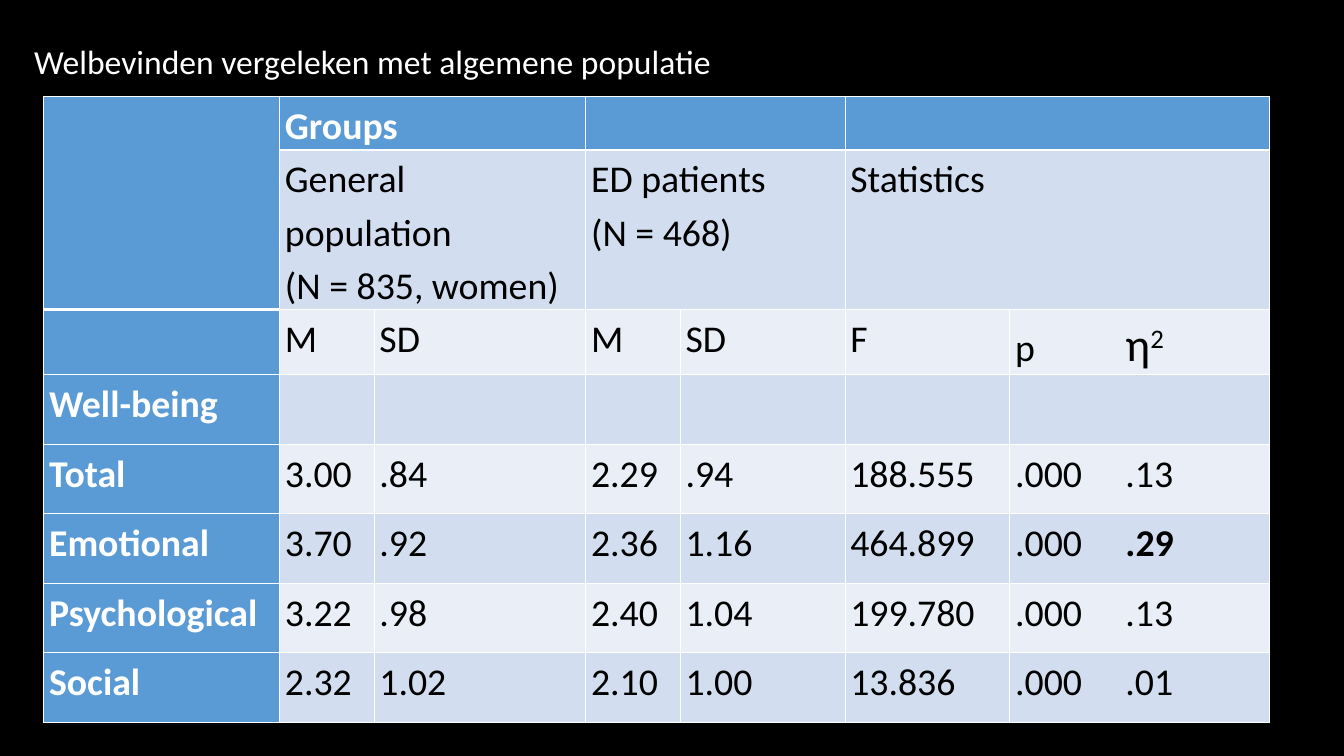
from lxml import etree
from pptx import Presentation
from pptx.dml.color import RGBColor
from pptx.enum.text import MSO_ANCHOR, MSO_AUTO_SIZE, PP_ALIGN
from pptx.oxml.ns import qn
from pptx.util import Inches, Pt

LEFT, TOP, NO_FIT = PP_ALIGN.LEFT, MSO_ANCHOR.TOP, MSO_AUTO_SIZE.NONE

BLACK = RGBColor(0x00, 0x00, 0x00)
WHITE = RGBColor(0xFF, 0xFF, 0xFF)
BLUE = RGBColor(0x5B, 0x9B, 0xD5)
BANDS = RGBColor(0xEA, 0xEF, 0xF7), RGBColor(0xD2, 0xDE, 0xEF)
FONT = "Calibri"

COLS = [3.12, 1.25, 2.8, 1.25, 2.18, 2.18, 3.43]
ROWS = [0.61, 1.86, 0.76] + [0.92] * 5
GROUP_COLS = [1, 3, 5]  # each group heading covers two columns
ETA_TAB = 1.46  # offset of the effect size within the last column

# Each cell is a string, or a list of (text, format) runs
CELLS = [
    ["", "Groups", "", "", "", "", ""],
    ["", "General population\n(N = 835, women)", "",
     "ED patients\n(N = 468)", "", "Statistics", ""],
    ["", "M", "SD", "M", "SD", "F",
     [("p\t", {}), ("η", {"size": 44}), ("2", {"size": 44, "baseline": 30})]],
    ["Well-being", "", "", "", "", "", ""],
    ["Total", "3.00", ".84", "2.29", ".94", "188.555", ".000\t.13"],
    ["Emotional", "3.70", ".92", "2.36", "1.16", "464.899",
     [(".000\t", {}), (".29", {"bold": True})]],
    ["Psychological", "3.22", ".98", "2.40", "1.04", "199.780", ".000\t.13"],
    ["Social", "2.32", "1.02", "2.10", "1.00", "13.836", ".000\t.01"],
]


def add_text(p, text, size=36, color=BLACK, bold=False, baseline=0):
    r = p.add_run()
    r.text = text
    r.font.name = FONT
    r.font.size = Pt(size)
    r.font.bold = bold
    r.font.color.rgb = color
    if baseline:
        r._r.get_or_add_rPr().set("baseline", str(baseline * 1000))


def add_tab(p, pos):
    tabs = etree.SubElement(p._p.get_or_add_pPr(), qn("a:tabLst"))
    etree.SubElement(tabs, qn("a:tab"), pos=str(Inches(pos)), algn="l")


def set_borders(cell, top=1, bottom=1):
    tcPr = cell._tc.get_or_add_tcPr()
    for side, width in zip("LRTB", (1, 1, top, bottom)):
        ln = etree.SubElement(tcPr, qn(f"a:ln{side}"), w=str(Pt(width)))
        fill = etree.SubElement(ln, qn("a:solidFill"))
        etree.SubElement(fill, qn("a:srgbClr"), val=str(WHITE))


def fill_cell(cell, content, row, col):
    heading = row == 0 or col == 0
    # Borders come before the fill in the cell properties
    set_borders(cell, top=3 if row == 1 else 1,
                bottom=3 if row == 0 or (row == 1 and col == 0) else 1)
    cell.fill.solid()
    cell.fill.fore_color.rgb = BLUE if heading else BANDS[row % 2]
    cell.margin_left = cell.margin_right = Inches(0.07)
    cell.margin_top = cell.margin_bottom = 0
    if not content:
        return

    lines = content
    if isinstance(content, str):
        lines = [[(line, {})] for line in content.split("\n")]
    else:
        lines = [content]
    tf = cell.text_frame
    for i, runs in enumerate(lines):
        p = tf.add_paragraph() if i else tf.paragraphs[0]
        if "\t" in runs[0][0]:
            add_tab(p, ETA_TAB)
        p.line_spacing = 1.15
        for text, fmt in runs:
            add_text(p, text, **{"color": WHITE if heading else BLACK,
                                 "bold": heading, **fmt})


def add_title(s, text):
    sp = s.shapes.title
    sp.left, sp.top, sp.width, sp.height = map(Inches, (0.35, 0.49, 10, 0.81))
    tf = sp.text_frame
    tf.word_wrap = True
    tf.auto_size = NO_FIT
    tf.vertical_anchor = TOP
    p = tf.paragraphs[0]
    p.alignment = LEFT
    add_text(p, text, size=32, color=WHITE)


def add_results_table(s):
    table = s.shapes.add_table(
        len(ROWS), len(COLS), Inches(0.58), Inches(1.28),
        Inches(sum(COLS)), Inches(sum(ROWS))).table
    for column, width in zip(table.columns, COLS):
        column.width = Inches(width)
    for row, height in zip(table.rows, ROWS):
        row.height = Inches(height)
    for i, row in enumerate(CELLS):
        for j, content in enumerate(row):
            fill_cell(table.cell(i, j), content, i, j)

    # Merged corner and group headings
    table.cell(0, 0).merge(table.cell(1, 0))
    for i in range(2):
        for j in GROUP_COLS:
            table.cell(i, j).merge(table.cell(i, j + 1))


def main():
    prs = Presentation()
    prs.slide_width, prs.slide_height = Inches(17.78), Inches(10)
    s = prs.slides.add_slide(prs.slide_layouts.get_by_name("Title Only"))
    s.background.fill.solid()
    s.background.fill.fore_color.rgb = BLACK
    add_title(s, "Welbevinden vergeleken met algemene populatie")
    add_results_table(s)
    prs.save("out.pptx")


if __name__ == "__main__":
    main()
